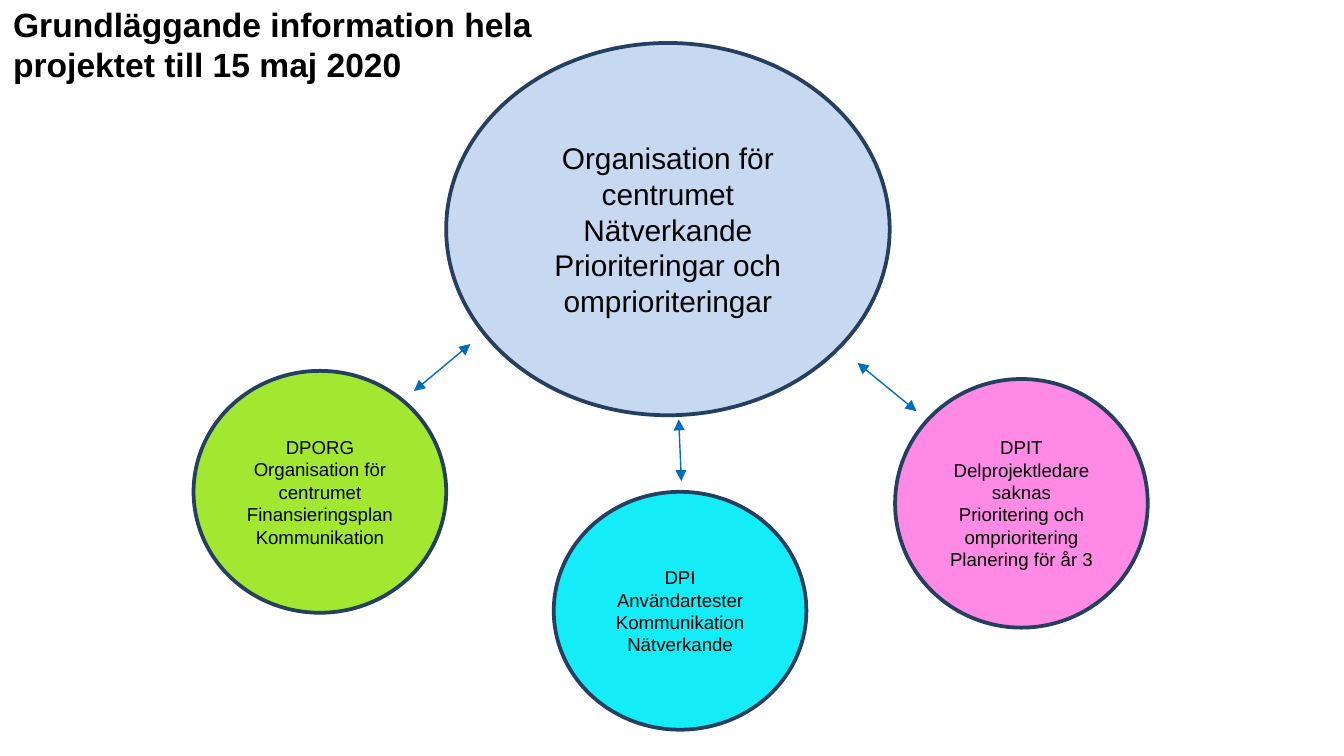
from dataclasses import dataclass

from lxml import etree
from pptx import Presentation
from pptx.dml.color import RGBColor
from pptx.enum.shapes import MSO_CONNECTOR, MSO_SHAPE
from pptx.enum.text import MSO_ANCHOR, PP_ALIGN
from pptx.oxml.ns import qn
from pptx.slide import Slide
from pptx.text.text import TextFrame
from pptx.util import Emu, Pt

PX = 4572  # EMU per px, 200 px to the inch
FONT = "Arial"
ELLIPSE = MSO_SHAPE.OVAL
STRAIGHT = MSO_CONNECTOR.STRAIGHT
MIDDLE = MSO_ANCHOR.MIDDLE
CENTER = PP_ALIGN.CENTER
LEFT = PP_ALIGN.LEFT

BLACK = RGBColor(0x00, 0x00, 0x00)
NAVY = RGBColor(0x24, 0x3F, 0x60)
ARROW_BLUE = RGBColor(0x00, 0x6E, 0xBC)
PALE_BLUE = RGBColor(0xC6, 0xD9, 0xF1)
GREEN = RGBColor(0xA2, 0xE8, 0x30)
CYAN = RGBColor(0x14, 0xED, 0xF8)
PINK = RGBColor(0xFE, 0x8A, 0xE5)


@dataclass
class Circle:
    left: int
    top: int
    width: int
    height: int
    fill: RGBColor
    size: int
    lines: list[str]


@dataclass
class Arrow:
    x1: int
    y1: int
    x2: int
    y2: int


# Whole project first, then its subprojects
CIRCLES = [
    Circle(664, 64, 660, 554, PALE_BLUE, 16,
           ["Organisation för centrumet", "Nätverkande",
            "Prioriteringar och omprioriteringar"]),
    Circle(288, 552, 376, 360, GREEN, 10,
           ["DPORG", "Organisation för centrumet", "Finansieringsplan",
            "Kommunikation"]),
    Circle(824, 732, 376, 354, CYAN, 10,
           ["DPI", "Användartester", "Kommunikation", "Nätverkande"]),
    Circle(1332, 564, 376, 370, PINK, 10,
           ["DPIT", "Delprojektledare saknas",
            "Prioritering och omprioritering", "Planering för år 3"]),
]
ARROWS = [
    Arrow(616, 582, 700, 512),
    Arrow(1364, 612, 1276, 540),
    Arrow(1014, 716, 1010, 624),
]


def px(length: int) -> Emu:
    return Emu(length * PX)


def write(frame: TextFrame, lines: list[str], size: int,
          align: PP_ALIGN, bold: bool = False) -> None:
    frame.word_wrap = True
    frame.text = "\n".join(lines)
    for paragraph in frame.paragraphs:
        paragraph.alignment = align
        for run in paragraph.runs:
            run.font.name = FONT
            run.font.size = Pt(size)
            run.font.bold = bold
            run.font.color.rgb = BLACK


def draw_circle(slide: Slide, circle: Circle) -> None:
    ellipse = slide.shapes.add_shape(
        ELLIPSE, px(circle.left), px(circle.top),
        px(circle.width), px(circle.height))
    ellipse.shadow.inherit = False
    ellipse.fill.solid()
    ellipse.fill.fore_color.rgb = circle.fill
    ellipse.line.color.rgb = NAVY
    ellipse.line.width = Pt(2)
    ellipse.text_frame.vertical_anchor = MIDDLE
    write(ellipse.text_frame, circle.lines, circle.size, CENTER)


def draw_arrow(slide: Slide, arrow: Arrow) -> None:
    connector = slide.shapes.add_connector(
        STRAIGHT, px(arrow.x1), px(arrow.y1), px(arrow.x2), px(arrow.y2))
    connector.line.color.rgb = ARROW_BLUE
    connector.line.width = Pt(0.75)
    properties = connector.element.spPr
    outline = properties.find(qn("a:ln"))
    for end in ("a:headEnd", "a:tailEnd"):
        etree.SubElement(outline, qn(end), type="triangle")
    etree.SubElement(properties, qn("a:effectLst"))


def draw_title(slide: Slide, title: str) -> None:
    box = slide.shapes.add_textbox(px(0), px(-4), px(1000), px(142))
    write(box.text_frame, [title], 18, LEFT, bold=True)


def main() -> None:
    deck = Presentation()
    deck.slide_width, deck.slide_height = px(2000), px(1125)
    slide = deck.slides.add_slide(deck.slide_layouts[6])

    # Project and subprojects
    for circle in CIRCLES:
        draw_circle(slide, circle)

    # Two-way links between them
    for arrow in ARROWS:
        draw_arrow(slide, arrow)

    # Heading
    draw_title(slide,
               "Grundläggande information hela projektet till 15 maj 2020")

    deck.save("out.pptx")


if __name__ == "__main__":
    main()
